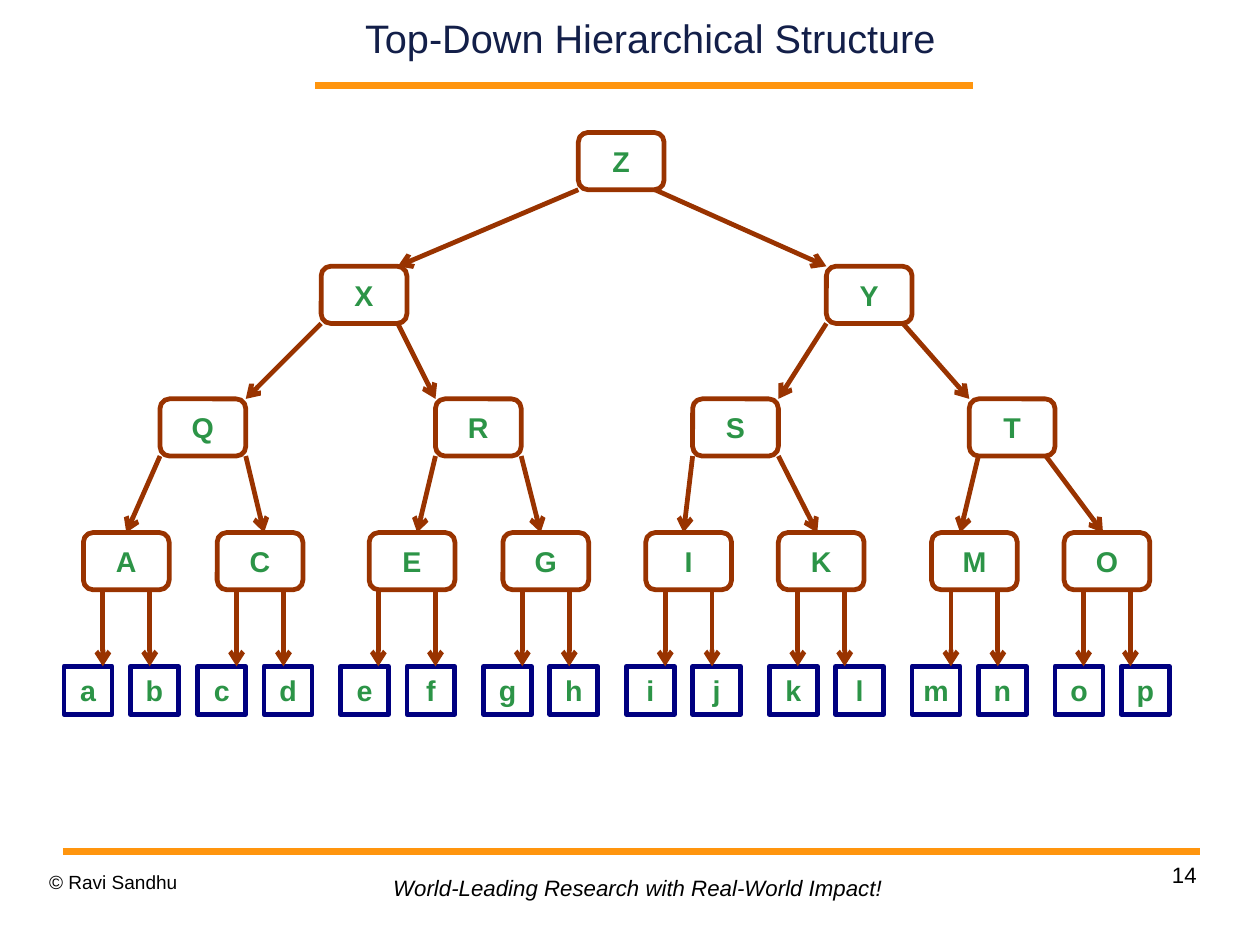
"""Build a slide with a four-level top-down hierarchy and its leaves."""
from lxml import etree
from pptx import Presentation
from pptx.dml.color import RGBColor
from pptx.enum import shapes, text
from pptx.oxml.ns import qn
from pptx.util import Cm, Inches, Pt

ORANGE = RGBColor(0xFF, 0x95, 0x0E)
BROWN = RGBColor(0x99, 0x33, 0x00)
NAVY = RGBColor(0x00, 0x00, 0x80)
GREEN = RGBColor(0x2C, 0x94, 0x47)
TITLE_BLUE = RGBColor(0x13, 0x1F, 0x49)
BLACK = RGBColor(0x00, 0x00, 0x00)

NODE_WIDTH, NODE_HEIGHT, LEAF_SIZE = 0.75, 0.5, 0.42
LEVEL_TOPS = [1.16, 2.33, 3.49, 4.66]
LEAF_TOP = 5.83
LEVELS = [
    {"Z": 5.06},
    {"X": 2.81, "Y": 7.23},
    {"Q": 1.4, "R": 3.81, "S": 6.06, "T": 8.48},
    {"A": 0.73, "C": 1.9, "E": 3.23, "G": 4.4,
     "I": 5.65, "K": 6.81, "M": 8.15, "O": 9.31},
]
BRANCHES = {
    "X": (5.06, 3.48), "Y": (5.73, 7.23),
    "Q": (2.81, 2.15), "R": (3.48, 3.81), "S": (7.23, 6.81), "T": (7.9, 8.48),
    "A": (1.4, 1.12), "C": (2.15, 2.31), "E": (3.81, 3.65), "G": (4.56, 4.73),
    "I": (6.06, 5.98), "K": (6.81, 7.15), "M": (8.56, 8.4), "O": (9.15, 9.65),
}
LEAF_PAIRS = ["ab", "cd", "ef", "gh", "ij", "kl", "mn", "op"]
LEAF_PAIR_LEFTS = [0.56] + [1.73 + 1.25 * step for step in range(7)]
LEAF_PITCH = 0.58


def set_font(paragraph, size, color, bold=False, italic=False):
    """Give a paragraph its Arial font."""
    font = paragraph.font
    font.name, font.size = "Arial", Pt(size)
    font.bold, font.italic = bold, italic
    font.color.rgb = color


def set_margins(frame, horizontal, vertical):
    """Set the insets of a text frame."""
    frame.margin_left = frame.margin_right = Inches(horizontal)
    frame.margin_top = frame.margin_bottom = Inches(vertical)


def add_line(slide, start, end, color, width):
    """Draw a straight line without a shadow."""
    line = slide.shapes.add_connector(
        shapes.MSO_CONNECTOR.STRAIGHT, *map(Inches, start + end))
    line.line.color.rgb = color
    line.line.width = Pt(width)
    etree.SubElement(line._element.spPr, qn("a:effectLst"))
    return line


def add_arrow(slide, start, end):
    """Draw a brown line with an open arrowhead at its end."""
    arrow = add_line(slide, start, end, BROWN, 3)
    etree.SubElement(arrow.line._get_or_add_ln(), qn("a:tailEnd"), type="arrow")
    return arrow


def add_box(slide, preset, label, place, color):
    """Draw an outlined box with a centred green letter."""
    box = slide.shapes.add_shape(preset, *map(Inches, place))
    box.shadow.inherit = False
    box.fill.background()
    box.line.color.rgb = color
    box.line.width = Pt(3)
    frame = box.text_frame
    frame.text = label
    frame.word_wrap = False
    frame.vertical_anchor = text.MSO_ANCHOR.MIDDLE
    paragraph = frame.paragraphs[0]
    paragraph.alignment = text.PP_ALIGN.CENTER
    set_font(paragraph, 18, color=GREEN, bold=True)
    return box


def add_footer(slide, words, place, size, align=text.PP_ALIGN.LEFT):
    """Add a line of footer text and return its text frame."""
    frame = slide.shapes.add_textbox(*map(Inches, place)).text_frame
    frame.text = words
    frame.word_wrap = True
    set_margins(frame, 0, 0)
    paragraph = frame.paragraphs[0]
    paragraph.alignment = align
    paragraph.line_spacing = 1.01
    set_font(paragraph, size, BLACK)
    return frame


def add_title(slide, words):
    """Place and format the title placeholder."""
    title = slide.shapes.title
    title.left, title.top, title.width, title.height = map(
        Inches, (2.85, 0.05, 5.68, 0.56))
    frame = title.text_frame
    frame.text = words
    frame.vertical_anchor = text.MSO_ANCHOR.MIDDLE
    set_margins(frame, 0, 0)
    frame.paragraphs[0].alignment = text.PP_ALIGN.CENTER
    set_font(frame.paragraphs[0], 25, TITLE_BLUE)


def add_nodes(slide):
    """Draw the inner nodes and return them by name."""
    nodes = {}
    for top, level in zip(LEVEL_TOPS, LEVELS):
        for name, left in level.items():
            nodes[name] = add_box(
                slide, shapes.MSO_SHAPE.ROUNDED_RECTANGLE, name,
                (left, top, NODE_WIDTH, NODE_HEIGHT), BROWN)
    return nodes


def add_branches(slide, nodes):
    """Link each node to its parent, joined where it meets the top middle."""
    for depth, level in enumerate(LEVELS[1:], 1):
        parent_bottom = LEVEL_TOPS[depth - 1] + NODE_HEIGHT
        for name, left in level.items():
            start, end = BRANCHES[name]
            arrow = add_arrow(slide, (start, parent_bottom),
                              (end, LEVEL_TOPS[depth]))
            if abs(end - left - NODE_WIDTH / 2) < 0.02:
                arrow.end_connect(nodes[name], 0)


def add_leaves(slide):
    """Draw a pair of leaves, with arrows, under each bottom node."""
    node_bottom = LEVEL_TOPS[-1] + NODE_HEIGHT
    for (name, node_left), pair, pair_left in zip(
            LEVELS[-1].items(), LEAF_PAIRS, LEAF_PAIR_LEFTS):
        offsets = (0.08 if name == "E" else 0.17, 0.58)
        for index, (leaf, offset) in enumerate(zip(pair, offsets)):
            place = (pair_left + index * LEAF_PITCH, LEAF_TOP,
                     LEAF_SIZE, LEAF_SIZE)
            add_box(slide, shapes.MSO_SHAPE.RECTANGLE, leaf, place, NAVY)
            center = node_left + offset
            add_arrow(slide, (center, node_bottom), (center, LEAF_TOP))


def main():
    """Build and save the slide."""
    presentation = Presentation()
    presentation.slide_width = Cm(28)
    presentation.slide_height = Cm(21)
    slide = presentation.slides.add_slide(presentation.slide_layouts[5])
    add_title(slide, "Top-Down Hierarchical Structure")
    add_line(slide, (2.76, 0.75), (8.51, 0.75), ORANGE, 4.31)
    add_line(slide, (0.55, 7.45), (10.5, 7.45), ORANGE, 4.31)
    add_footer(slide, "14", (7.9, 7.53, 2.57, 0.57), 14, text.PP_ALIGN.RIGHT)
    add_footer(slide, "© Ravi Sandhu", (0.43, 7.61, 2.57, 0.43), 12)
    motto = add_footer(slide, "World-Leading Research with Real-World Impact!",
                       (3.35, 7.61, 4.58, 0.33), 14)
    motto.word_wrap = False
    motto.auto_size = text.MSO_AUTO_SIZE.SHAPE_TO_FIT_TEXT
    set_margins(motto, 0.09, 0.04)
    motto.paragraphs[0].line_spacing = 1.0
    motto.paragraphs[0].font.italic = True
    nodes = add_nodes(slide)
    add_branches(slide, nodes)
    add_leaves(slide)
    presentation.save("out.pptx")


if __name__ == "__main__":
    main()
